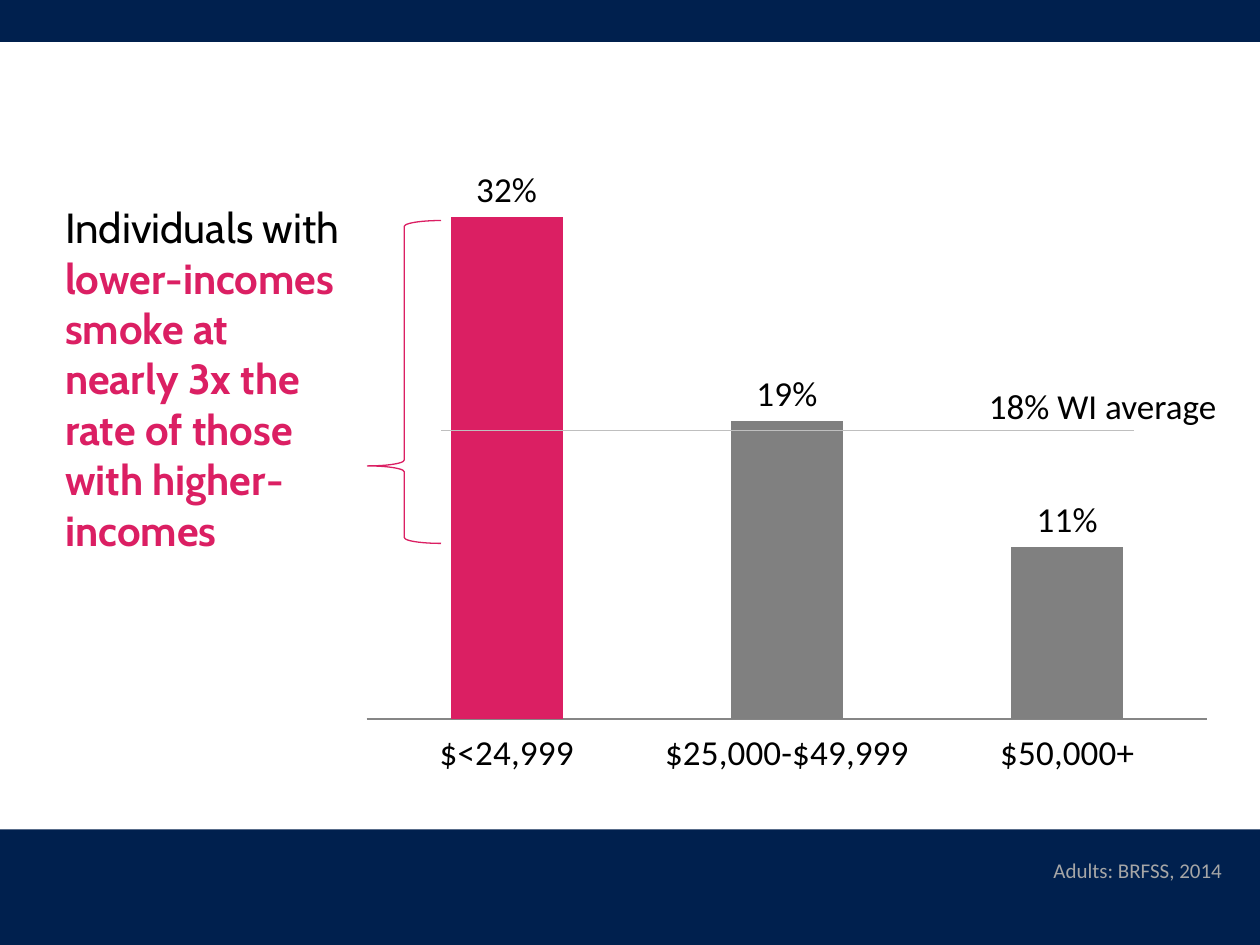
from lxml.etree import SubElement
from pptx import Presentation
from pptx.chart.data import CategoryChartData
from pptx.dml.color import RGBColor
from pptx.enum.chart import (XL_CHART_TYPE as ChartType, XL_LABEL_POSITION as LabelPos,
                             XL_TICK_LABEL_POSITION as TickLabels, XL_TICK_MARK as TickMark)
from pptx.enum.shapes import MSO_CONNECTOR as Connector, MSO_SHAPE as Shape
from pptx.enum.text import MSO_ANCHOR as Anchor, MSO_AUTO_SIZE as AutoSize, PP_ALIGN as Align
from pptx.oxml.ns import qn
from pptx.util import Pt

COLORS = {key: RGBColor.from_string(value) for key, value in {
    "navy": "00204E", "pink": "DB1F63", "bar": "808080", "axis": "868686",
    "average": "BFBFBF", "source": "A6A6A6", "text": "000000"}.items()}


def add_run(paragraph, text, size, color, font="Calibri", bold=False):
    run = paragraph.add_run()
    run.text = text
    run.font.name, run.font.size, run.font.bold = font, Pt(size), bold
    run.font.color.rgb = COLORS[color]


prs = Presentation()
prs.slide_width, prs.slide_height = Pt(720), Pt(540)
slide = prs.slides.add_slide(prs.slide_layouts[5])
shapes = slide.shapes

# Smoking rate by income
rates = CategoryChartData(number_format="0%")
rates.categories = ["$<24,999", "$25,000-$49,999", "$50,000+"]
rates.add_series("Series 1", [0.32, 0.19, 0.11])
chart = shapes.add_chart(ChartType.COLUMN_CLUSTERED, Pt(199.5), Pt(90),
                         Pt(500.5), Pt(360), rates).chart
chart.has_legend = chart.has_title = False
chart.font.name, chart.font.size = "Calibri", Pt(18)
chart.font.color.rgb = COLORS["text"]

income_axis = chart.category_axis
income_axis.major_tick_mark = TickMark.NONE
income_axis.tick_label_position = TickLabels.LOW
income_axis.tick_labels.font.size = Pt(20)
income_axis.format.line.color.rgb = COLORS["axis"]
income_axis.format.line.width = Pt(0.75)

rate_axis = chart.value_axis
rate_axis.visible = rate_axis.has_major_gridlines = False
rate_axis.minimum_scale, rate_axis.maximum_scale = 0, 0.35

plot = chart.plots[0]
plot.gap_width, plot.vary_by_categories = 150, False
bars = plot.series[0]
bars.format.fill.solid()
bars.format.fill.fore_color.rgb = COLORS["navy"]
for index, color in enumerate(["pink", "bar", "bar"]):
    fill = bars.points[index].format.fill
    fill.solid()
    fill.fore_color.rgb = COLORS[color]

plot.has_data_labels = True
labels = plot.data_labels
labels.show_value, labels.position = True, LabelPos.OUTSIDE_END
labels.number_format, labels.number_format_is_linked = "0%", False
labels.font.size = Pt(20)

# Headline
headline = shapes.title
headline.left, headline.top, headline.width, headline.height = Pt(30), Pt(93), Pt(173), Pt(246)
frame = headline.text_frame
frame.word_wrap, frame.auto_size = True, AutoSize.NONE
frame.vertical_anchor = Anchor.MIDDLE
statement = frame.paragraphs[0]
statement.alignment = Align.LEFT
add_run(statement, "Individuals with ", 24, "text", "Cabin")
add_run(statement, "lower-incomes smoke at nearly 3x the rate of those with higher-incomes",
        24, "pink", "Cabin", True)

# Brace spanning the gap between lowest and highest income
brace = shapes.add_shape(Shape.RIGHT_BRACE, Pt(210), Pt(126), Pt(42), Pt(184.5))
brace.rotation = 180
brace.adjustments[0], brace.adjustments[1] = 0.08, 0.24
brace.shadow.inherit = False
brace.fill.background()
brace.line.color.rgb, brace.line.width = COLORS["pink"], Pt(0.75)

# Top and bottom bands
for left, top, width, height in [(-12, 474, 750, 72), (-6, 0, 732, 24)]:
    band = shapes.add_shape(Shape.RECTANGLE, Pt(left), Pt(top), Pt(width), Pt(height))
    band.shadow.inherit = False
    band.fill.solid()
    band.fill.fore_color.rgb = COLORS["navy"]
    band.line.fill.background()

# State average line
average = shapes.add_connector(Connector.STRAIGHT, Pt(252), Pt(246), Pt(648), Pt(246))
average.line.color.rgb, average.line.width = COLORS["average"], Pt(1)
SubElement(average.element.spPr, qn("a:effectLst"))

# Source note and average label
for text, left, top, width, height, size, color, align in [
        ("Adults: BRFSS, 2014", 479, 486.5, 226.5, 22, 12, "source", Align.RIGHT),
        ("18% WI average", 558, 216, 147, 31.5, 20, "text", Align.LEFT)]:
    frame = shapes.add_textbox(Pt(left), Pt(top), Pt(width), Pt(height)).text_frame
    frame.word_wrap, frame.auto_size = True, AutoSize.SHAPE_TO_FIT_TEXT
    frame.paragraphs[0].alignment = align
    add_run(frame.paragraphs[0], text, size, color)

prs.save("out.pptx")
